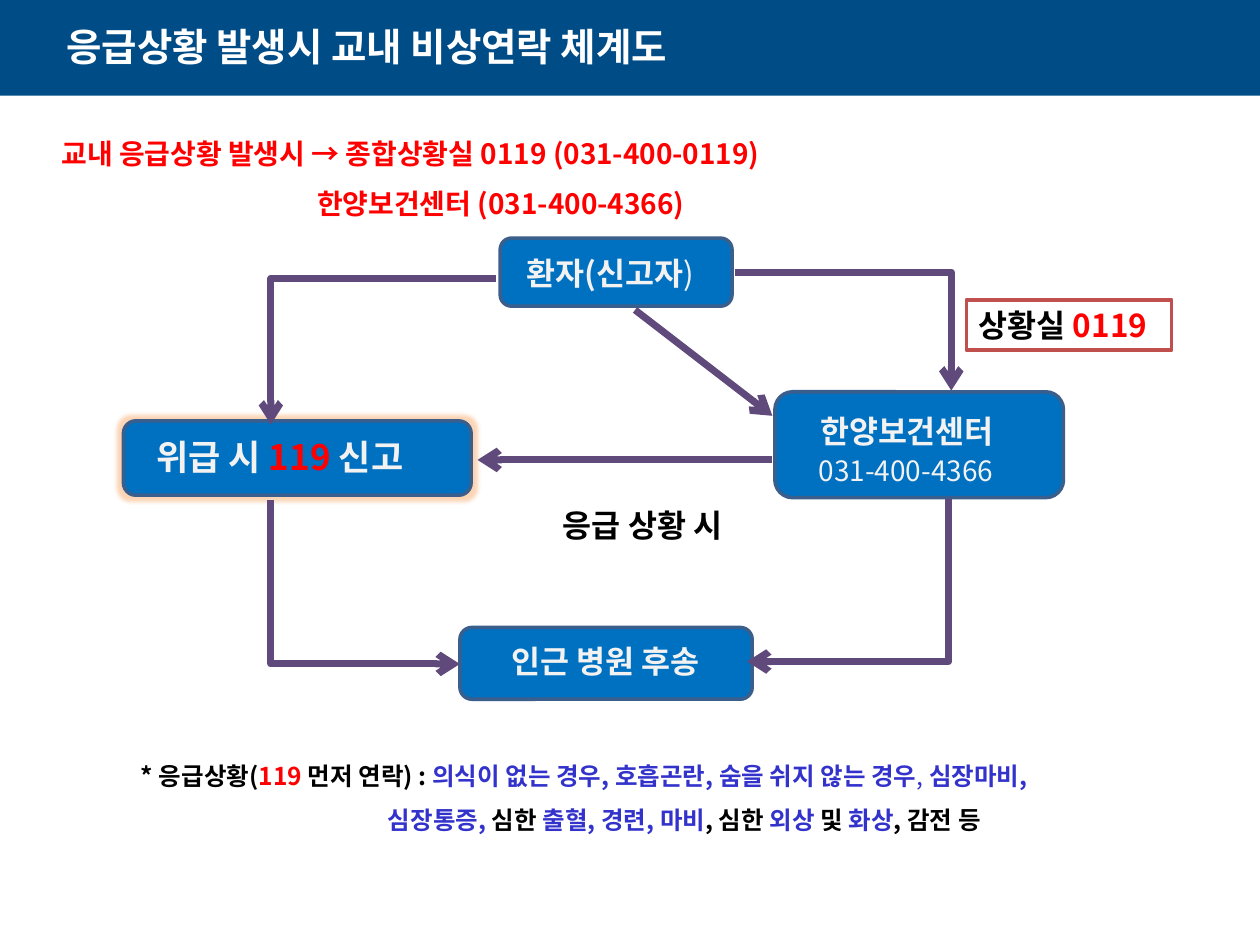
from dataclasses import dataclass

from lxml.etree import SubElement
from pptx import Presentation
from pptx.dml.color import RGBColor
from pptx.enum.shapes import MSO_CONNECTOR as LineKind, MSO_SHAPE as ShapeKind
from pptx.enum.text import MSO_ANCHOR as Anchor
from pptx.oxml.ns import qn
from pptx.shapes.base import BaseShape
from pptx.slide import Slide
from pptx.text.text import TextFrame
from pptx.util import Emu, Pt

EMU_PER_PX = 9144  # 100 px to the inch


@dataclass(frozen=True)
class Theme:
    font: str = "Noto Sans CJK KR"
    header: str = "004C86"
    node: str = "0070C0"
    node_edge: str = "3A5F8C"
    arrow: str = "604A7B"
    tag_edge: str = "C0504D"
    glow: str = "F79646"
    white: str = "FFFFFF"
    pale: str = "F2F2F2"
    black: str = "000000"
    red: str = "FF0000"
    blue: str = "3333CC"
    title_size: int = 22
    alert_size: int = 20
    label_size: int = 18
    contact_size: int = 16
    note_size: int = 14
    edge_width: int = 2
    arrow_width: int = 4


THEME = Theme()


@dataclass(frozen=True)
class Area:
    left: int
    top: int
    width: int
    height: int


@dataclass(frozen=True)
class Span:
    text: str
    color: str
    bold: bool = True


@dataclass(frozen=True)
class Line:
    spans: tuple[Span, ...]
    indent: int = 0


@dataclass(frozen=True)
class Label:
    area: Area
    size: int
    lines: tuple[Line, ...]
    spacing: float = 1.0
    anchor: Anchor = Anchor.TOP


@dataclass(frozen=True)
class Arrow:
    """An arrow; bend is the turning point as a share of its width, None if straight."""
    start: tuple[int, int]
    end: tuple[int, int]
    bend: float | None = None


def one(text: str, color: str, bold: bool = True, indent: int = 0) -> Line:
    return Line((Span(text, color, bold),), indent)


HEADER = Area(0, 0, 1000, 76)
EMERGENCY_NODE = Area(98, 334, 276, 59)
NODES = (
    EMERGENCY_NODE,
    Area(397, 189, 184, 54),
    Area(615, 311, 229, 84),
    Area(365, 498, 232, 57),
)
ARROWS = (
    Arrow((394, 221), (215, 337), 1),
    Arrow((583, 216), (755, 310), 1),
    Arrow((215, 397), (365, 527), 0),
    Arrow((753, 396), (593, 525), 0),
    Arrow((613, 365), (379, 365)),
    Arrow((504, 246), (613, 330)),
)
TAG = Label(Area(767, 238, 163, 40), THEME.label_size, (
    Line((Span("상황실", THEME.black), Span(" 0119", THEME.red))),))
LABELS = (
    Label(Area(43, 13, 654, 47), THEME.title_size,
          (one("응급상황 발생시 교내 비상연락 체계도", THEME.white),), anchor=Anchor.MIDDLE),
    Label(Area(39, 90, 797, 91), THEME.contact_size, (
        one("교내 응급상황 발생시 → 종합상황실 0119 (031-400-0119)", THEME.red),
        one("한양보건센터 (031-400-4366)", THEME.red, indent=203),
    ), spacing=1.5),
    Label(Area(114, 341, 271, 44), THEME.alert_size, (Line((
        Span("위급 시 ", THEME.pale), Span("119 ", THEME.red), Span("신고", THEME.pale))),)),
    Label(Area(408, 197, 187, 40), THEME.label_size, (Line((
        Span("환자(신고자", THEME.pale), Span(")", THEME.pale, False))),)),
    Label(Area(620, 322, 252, 40), THEME.label_size,
          (one("한양보건센터", THEME.pale, indent=21),)),
    Label(Area(626, 355, 187, 37), THEME.contact_size,
          (one("031-400-4366", THEME.pale, False, indent=14),)),
    Label(Area(396, 505, 300, 40), THEME.label_size, (one("인근 병원 후송", THEME.pale),)),
    Label(Area(437, 397, 164, 40), THEME.label_size, (one("응급 상황 시", THEME.black),)),
    Label(Area(102, 587, 818, 81), THEME.note_size, (
        Line((
            Span("* 응급상황(", THEME.black),
            Span("119 ", THEME.red),
            Span("먼저 연락) : ", THEME.black),
            Span("의식이 없는 경우, 호흡곤란, 숨을 쉬지 않는 경우", THEME.blue),
            Span(", ", THEME.blue, False),
            Span("심장마비,", THEME.blue),
        )),
        Line((
            Span("심장통증, ", THEME.blue),
            Span("심한 ", THEME.black),
            Span("출혈, 경련, 마비", THEME.blue),
            Span(", 심한 ", THEME.black),
            Span("외상 ", THEME.blue),
            Span("및", THEME.black),
            Span(" 화상", THEME.blue),
            Span(", 감전 등", THEME.black),
        ), indent=196),
    ), spacing=1.5),
)


def px(value: int) -> Emu:
    return Emu(value * EMU_PER_PX)


def frame(area: Area) -> tuple[Emu, Emu, Emu, Emu]:
    return px(area.left), px(area.top), px(area.width), px(area.height)


def rgb(color: str) -> RGBColor:
    return RGBColor.from_string(color)


def write(text_frame: TextFrame, label: Label) -> None:
    text_frame.word_wrap = True
    text_frame.vertical_anchor = label.anchor
    for index, line in enumerate(label.lines):
        para = text_frame.add_paragraph() if index else text_frame.paragraphs[0]
        para.line_spacing = label.spacing
        properties = para._p.get_or_add_pPr()
        properties.set("algn", "l")
        properties.set("marL", str(px(line.indent)))
        for span in line.spans:
            run = para.add_run()
            run.text = span.text
            run.font.size = Pt(label.size)
            run.font.bold = span.bold
            run.font.color.rgb = rgb(span.color)
            run.font.name = THEME.font
            SubElement(run.font._element, qn("a:ea"), typeface=THEME.font)


def add_block(page: Slide, kind: ShapeKind, area: Area, fill: str,
              edge: str | None = None) -> BaseShape:
    box = page.shapes.add_shape(kind, *frame(area))
    box.shadow.inherit = False
    box.fill.solid()
    box.fill.fore_color.rgb = rgb(fill)
    if edge:
        box.line.color.rgb = rgb(edge)
        box.line.width = Pt(THEME.edge_width)
    else:
        box.line.fill.background()
    return box


def add_glow(box: BaseShape) -> None:
    effects = box._element.spPr.find(qn("a:effectLst"))
    glow = SubElement(effects, qn("a:glow"), rad="63500")
    color = SubElement(glow, qn("a:srgbClr"), val=THEME.glow)
    SubElement(color, qn("a:alpha"), val="40000")


def add_arrow(page: Slide, arrow: Arrow) -> None:
    kind = LineKind.STRAIGHT if arrow.bend is None else LineKind.ELBOW
    connector = page.shapes.add_connector(kind, *map(px, arrow.start + arrow.end))
    connector.line.color.rgb = rgb(THEME.arrow)
    connector.line.width = Pt(THEME.arrow_width)
    properties = connector._element.spPr
    SubElement(properties.find(qn("a:ln")), qn("a:tailEnd"), type="arrow")
    SubElement(properties, qn("a:effectLst"))
    if arrow.bend is not None:
        guides = properties.find(qn("a:prstGeom")).get_or_add_avLst()
        SubElement(guides, qn("a:gd"), name="adj1", fmla=f"val {round(arrow.bend * 100000)}")


def main() -> None:
    deck = Presentation()
    deck.slide_width, deck.slide_height = px(1000), px(750)
    page = deck.slides.add_slide(deck.slide_layouts[6])
    add_block(page, ShapeKind.RECTANGLE, HEADER, THEME.header)
    for area in NODES:
        node = add_block(page, ShapeKind.ROUNDED_RECTANGLE, area, THEME.node, THEME.node_edge)
        if area is EMERGENCY_NODE:
            add_glow(node)
    for arrow in ARROWS:
        add_arrow(page, arrow)
    tag = add_block(page, ShapeKind.RECTANGLE, TAG.area, THEME.white, THEME.tag_edge)
    write(tag.text_frame, TAG)
    for label in LABELS:
        write(page.shapes.add_textbox(*frame(label.area)).text_frame, label)
    deck.save("out.pptx")


if __name__ == "__main__":
    main()
